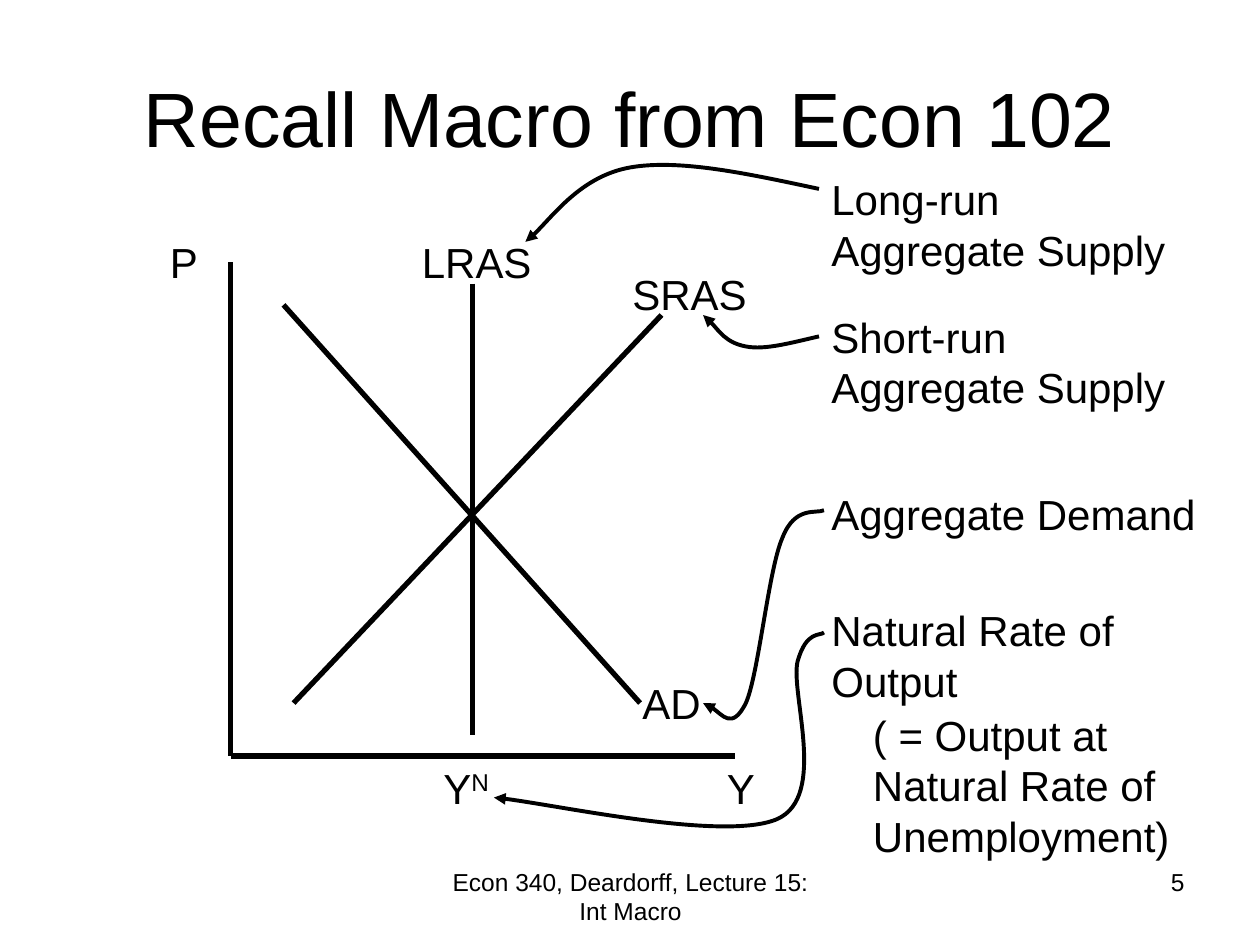
"""Build the aggregate supply and demand slide."""
from lxml import etree
from pptx import Presentation
from pptx.dml.color import RGBColor
from pptx.enum.shapes import MSO_CONNECTOR
from pptx.enum.text import MSO_ANCHOR, PP_ALIGN
from pptx.oxml.ns import qn
from pptx.util import Inches, Pt

LEFT, CENTER, RIGHT = PP_ALIGN.LEFT, PP_ALIGN.CENTER, PP_ALIGN.RIGHT
TOP, MIDDLE = MSO_ANCHOR.TOP, MSO_ANCHOR.MIDDLE
STRAIGHT = MSO_CONNECTOR.STRAIGHT
FONT, INK = "Arial", "000000"

TITLE = ("Recall Macro from Econ 102", 0.5, 0.3, 9, 1.25)
FOOTERS = [
    ("5", 7.17, 6.83, 2.33, 0.52, RIGHT),
    ("Econ 340, Deardorff, Lecture 15: Int Macro", 3.42, 6.83, 3.17, 0.52, CENTER),
]
GRAPH_LABELS = [
    ("Y", 5.67, 6),
    ("P", 1.25, 1.83),
    ("LRAS", 3.25, 1.83),
    ("SRAS", 4.92, 2.08),
    ("AD", 5, 5.33),
]
NATURAL_OUTPUT = ("Y", "N", 3.42, 6)
EXPLANATIONS = [
    ("Long-run Aggregate Supply", 6.5, 1.33, 2.92, 0.9),
    ("Short-run Aggregate Supply", 6.5, 2.42, 2.92, 0.9),
    ("Aggregate Demand", 6.5, 3.83, 3.25, 0.5),
    ("Natural Rate of Output", 6.5, 4.75, 3.25, 0.9),
    ("( = Output at Natural Rate of Unemployment)", 6.83, 5.58, 2.75, 1.31),
]
GRAPH_LINES = {
    "price axis": (1.83, 2.08, 1.83, 6),
    "output axis": (1.83, 6, 5.83, 6),
    "SRAS": (2.33, 5.58, 5.25, 2.5),
    "LRAS": (3.75, 2.25, 3.75, 5.83),
    "AD": (2.25, 2.42, 5.08, 5.58),
}
POINTERS = {
    "LRAS": [(6.5, 1.5), (5.94, 1.38), (5.39, 1.26), (5, 1.33),
             (4.61, 1.4), (4.31, 1.82), (4.17, 1.92)],
    "SRAS": [(6.5, 2.67), (6.28, 2.72), (6.07, 2.78), (5.92, 2.75),
             (5.76, 2.72), (5.64, 2.54), (5.58, 2.5)],
    "AD": [(6.54, 4.05), (6.48, 4.08), (6.31, 4.01), (6.21, 4.27),
           (6.1, 4.52), (6.02, 5.36), (5.92, 5.58),
           (5.81, 5.8), (5.64, 5.58), (5.58, 5.58)],
    "natural output": [(6.54, 5.02), (6.51, 5.05), (6.4, 5), (6.33, 5.25),
                       (6.27, 5.5), (6.57, 6.32), (6.17, 6.5),
                       (5.76, 6.68), (4.29, 6.36), (3.92, 6.33)],
}


def color(hex_string):
    return RGBColor.from_string(hex_string)


def style_run(run, size):
    run.font.name = FONT
    run.font.size = Pt(size)
    run.font.color.rgb = color(INK)


def style_line(line, width):
    line.color.rgb = color(INK)
    line.width = Pt(width)


def add_text(slide, text, left, top, width, height, size=24, align=LEFT, anchor=TOP):
    box = slide.shapes.add_textbox(*map(Inches, (left, top, width, height)))
    frame = box.text_frame
    frame.word_wrap = True
    frame.vertical_anchor = anchor
    frame.text = text
    paragraph = frame.paragraphs[0]
    paragraph.alignment = align
    style_run(paragraph.runs[0], size)
    return paragraph


def add_superscript(paragraph, text, size=24):
    run = paragraph.add_run()
    run.text = text
    style_run(run, size)
    run.font._element.set("baseline", "30000")


def add_graph_line(slide, ends):
    connector = slide.shapes.add_connector(STRAIGHT, *map(Inches, ends))
    style_line(connector.line, 3)
    etree.SubElement(connector._element.spPr, qn("a:effectLst"))


def add_pointer(slide, points):
    """Draw a chain of cubic Bezier curves ending in an arrowhead."""
    start, *rest = [(Inches(x), Inches(y)) for x, y in points]
    builder = slide.shapes.build_freeform(*start)
    builder.add_line_segments(rest, close=False)
    shape = builder.convert_to_shape()
    shape.shadow.inherit = False
    shape.fill.background()
    style_line(shape.line, 2.25)
    outline = next(shape._element.iter(qn("a:path")))
    segments = outline.findall(qn("a:lnTo"))
    for first in range(0, len(segments), 3):
        curve = etree.SubElement(outline, qn("a:cubicBezTo"))
        for segment in segments[first:first + 3]:
            curve.append(segment[0])
            outline.remove(segment)
    line_element = shape._element.spPr.find(qn("a:ln"))
    etree.SubElement(line_element, qn("a:tailEnd"), type="triangle")


def main():
    presentation = Presentation()
    presentation.slide_width, presentation.slide_height = Inches(10), Inches(7.5)
    slide = presentation.slides.add_slide(presentation.slide_layouts[6])
    add_text(slide, *TITLE, size=44, align=CENTER, anchor=MIDDLE)
    for ends in GRAPH_LINES.values():
        add_graph_line(slide, ends)
    for text, left, top in GRAPH_LABELS:
        add_text(slide, text, left, top, 1.17, 0.5)
    base, superscript, left, top = NATURAL_OUTPUT
    add_superscript(add_text(slide, base, left, top, 1.17, 0.5), superscript)
    for explanation in EXPLANATIONS:
        add_text(slide, *explanation)
    for points in POINTERS.values():
        add_pointer(slide, points)
    for *footer, align in FOOTERS:
        add_text(slide, *footer, size=14, align=align)
    presentation.save("out.pptx")


if __name__ == "__main__":
    main()
